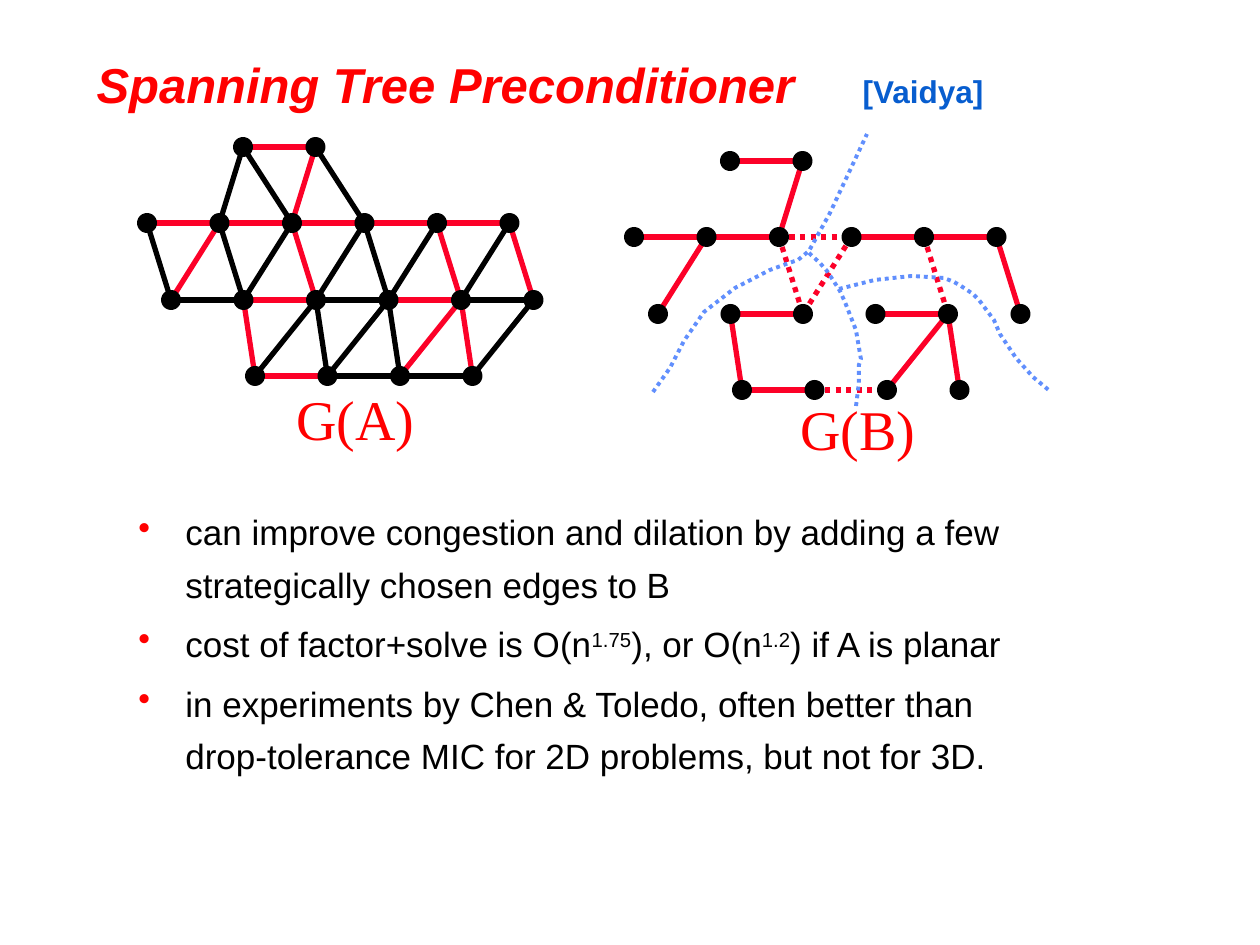
from lxml.etree import SubElement
from pptx import Presentation
from pptx.dml.color import RGBColor
from pptx.enum.dml import MSO_LINE_DASH_STYLE as Dash
from pptx.enum.shapes import MSO_CONNECTOR as Connector, MSO_SHAPE as Shape
from pptx.enum.text import MSO_ANCHOR as Anchor, MSO_AUTO_SIZE as AutoSize, PP_ALIGN as Align
from pptx.oxml.ns import qn
from pptx.util import Pt

SCALE = 914400 / 126
COLORS = {"black": "000000", "title": "FF0000", "cite": "075DCF",
          "tree": "FC0128", "cut": "618FFD"}

STEP, NODE = 72.5, 20
NODE_ROWS = [("ab", 243, 147), ("cdefgh", 147, 223), ("ijklmn", 171, 300), ("opqr", 255, 376)]
SHARED_TREE = "ab be cd de di fg gh hn jk jo lm mq mr op"
CROSSING = "ef ek gm"
GRAPHS = [
    {"shift": (0, 0), "edges": f"{SHARED_TREE} {CROSSING}", "dotted": "",
     "rest": "ij kl mn pq qr ci dj fl hm gl fk ej ko lp nr lq kp ae bf ad"},
    {"shift": (487, 14), "edges": SHARED_TREE, "dotted": f"{CROSSING} fk pq", "rest": ""},
]
CUTS = [
    [(653, 392), (670, 368), (684, 341), (704, 312), (735, 288), (770, 270), (789, 263),
     (798, 260), (809, 251), (830, 213), (867, 134)],
    [(809, 253), (820, 263), (827, 271), (833, 280), (840, 291), (845, 302), (856, 330),
     (861, 359), (859, 365), (859, 383), (856, 407)],
    [(839, 289), (875, 280), (912, 276), (944, 278), (954, 282), (961, 286), (973, 294),
     (979, 300), (994, 320), (1000, 334), (1016, 358), (1033, 377), (1045, 387), (1051, 392)],
]
LABELS = [("G(A)", (284, 378, 144, 79)), ("G(B)", (788, 388, 155, 79))]
BULLETS = [
    ["can improve congestion and dilation by adding a few strategically chosen edges to B"],
    ["cost of factor+solve is O(n", "1.75", "), or O(n", "1.2", ") if A is planar"],
    ["in experiments by Chen & Toledo, often better than "
     "drop-tolerance MIC for 2D problems, but not for 3D."],
]


def px(length):
    """Turn pixels into EMU."""
    return round(length * SCALE)


def color(name):
    """Look up a named colour."""
    return RGBColor.from_string(COLORS[name])


def add_span(para, text, color_name, **formats):
    """Append a formatted run to a paragraph."""
    span = para.add_run()
    span.text = text
    span.font.color.rgb = color(color_name)
    for name, value in formats.items():
        setattr(span.font, name, value)
    return span


def style_line(line, color_name, width, dotted):
    """Set the colour, width and dash of a line."""
    line.color.rgb = color(color_name)
    line.width = Pt(width)
    if dotted:
        line.dash_style = Dash.ROUND_DOT


def add_title(page):
    """Place the title and set its citation at a tab stop."""
    title = page.shapes.title
    box = {"left": 84, "top": 42, "width": 1032, "height": 84}
    for name, value in box.items():
        setattr(title, name, px(value))
    title.text_frame.vertical_anchor = Anchor.MIDDLE
    para = title.text_frame.paragraphs[0]
    para.alignment = Align.LEFT
    tabs = SubElement(para._p.get_or_add_pPr(), qn("a:tabLst"))
    SubElement(tabs, qn("a:tab"), pos=str(px(766)), algn="l")
    shared = {"name": "Arial", "bold": True}
    add_span(para, "Spanning Tree Preconditioner\t", "title", size=Pt(28), italic=True, **shared)
    add_span(para, "[Vaidya]", "cite", size=Pt(18), italic=False, **shared)


def add_bullets(page):
    """Write the bulleted list, with every second run as a superscript."""
    frame = page.shapes.add_textbox(px(126), px(494), px(945), px(346)).text_frame
    frame.word_wrap = True
    for index, texts in enumerate(BULLETS):
        para = frame.add_paragraph() if index else frame.paragraphs[0]
        para.line_spacing = 1.25
        para.space_before = Pt(4)
        props = para._p.get_or_add_pPr()
        props.set("marL", str(px(47)))
        props.set("indent", str(px(-47)))
        bullet_color = SubElement(props, qn("a:buClr"))
        SubElement(bullet_color, qn("a:srgbClr"), val=COLORS["title"])
        SubElement(props, qn("a:buChar"), char="•")
        for position, text in enumerate(texts):
            span = add_span(para, text, "black", name="Arial", size=Pt(20))
            if position % 2:
                span.font._element.set("baseline", "30000")


def add_label(page, text, box):
    """Write the name of a graph."""
    frame = page.shapes.add_textbox(*map(px, box)).text_frame
    frame.word_wrap = False
    frame.auto_size = AutoSize.SHAPE_TO_FIT_TEXT
    add_span(frame.paragraphs[0], text, "title", name="Times New Roman", size=Pt(32))


def add_edges(shapes, centers, edges, color_name, dotted=False):
    """Draw the edges given as pairs of node letters."""
    for start, end in edges.split():
        ends = map(px, centers[start] + centers[end])
        edge = shapes.add_connector(Connector.STRAIGHT, *ends)
        style_line(edge.line, color_name, 3, dotted)
        SubElement(edge._element.spPr, qn("a:effectLst"))


def add_node(shapes, center):
    """Draw a round node about its centre."""
    left, top = (px(value - NODE / 2) for value in center)
    node = shapes.add_shape(Shape.OVAL, left, top, px(NODE), px(NODE))
    node.shadow.inherit = False
    node.fill.solid()
    node.fill.fore_color.rgb = color("black")
    node.line.fill.background()


def add_graph(page, graph):
    """Draw one graph as a group of edges and nodes."""
    across, down = graph["shift"]
    centers = {letter: (left + across + STEP * index, top + down)
               for letters, left, top in NODE_ROWS
               for index, letter in enumerate(letters)}
    shapes = page.shapes.add_group_shape().shapes
    add_edges(shapes, centers, graph["dotted"], "tree", dotted=True)
    add_edges(shapes, centers, graph["edges"], "tree")
    for center in centers.values():
        add_node(shapes, center)
    add_edges(shapes, centers, graph["rest"], "black")


def add_cut(page, points):
    """Draw a dotted open outline between parts of the tree."""
    builder = page.shapes.build_freeform(*points[0], scale=SCALE)
    builder.add_line_segments(points[1:], close=False)
    cut = builder.convert_to_shape()
    cut.shadow.inherit = False
    cut.fill.background()
    style_line(cut.line, "cut", 2.25, dotted=True)


def main():
    """Build the slide and save it."""
    deck = Presentation()
    deck.slide_width, deck.slide_height = px(1260), px(945)
    page = deck.slides.add_slide(deck.slide_layouts[5])
    add_title(page)
    add_bullets(page)
    for text, box in LABELS:
        add_label(page, text, box)
    for graph in GRAPHS:
        add_graph(page, graph)
    for points in CUTS:
        add_cut(page, points)
    deck.save("out.pptx")


if __name__ == "__main__":
    main()
